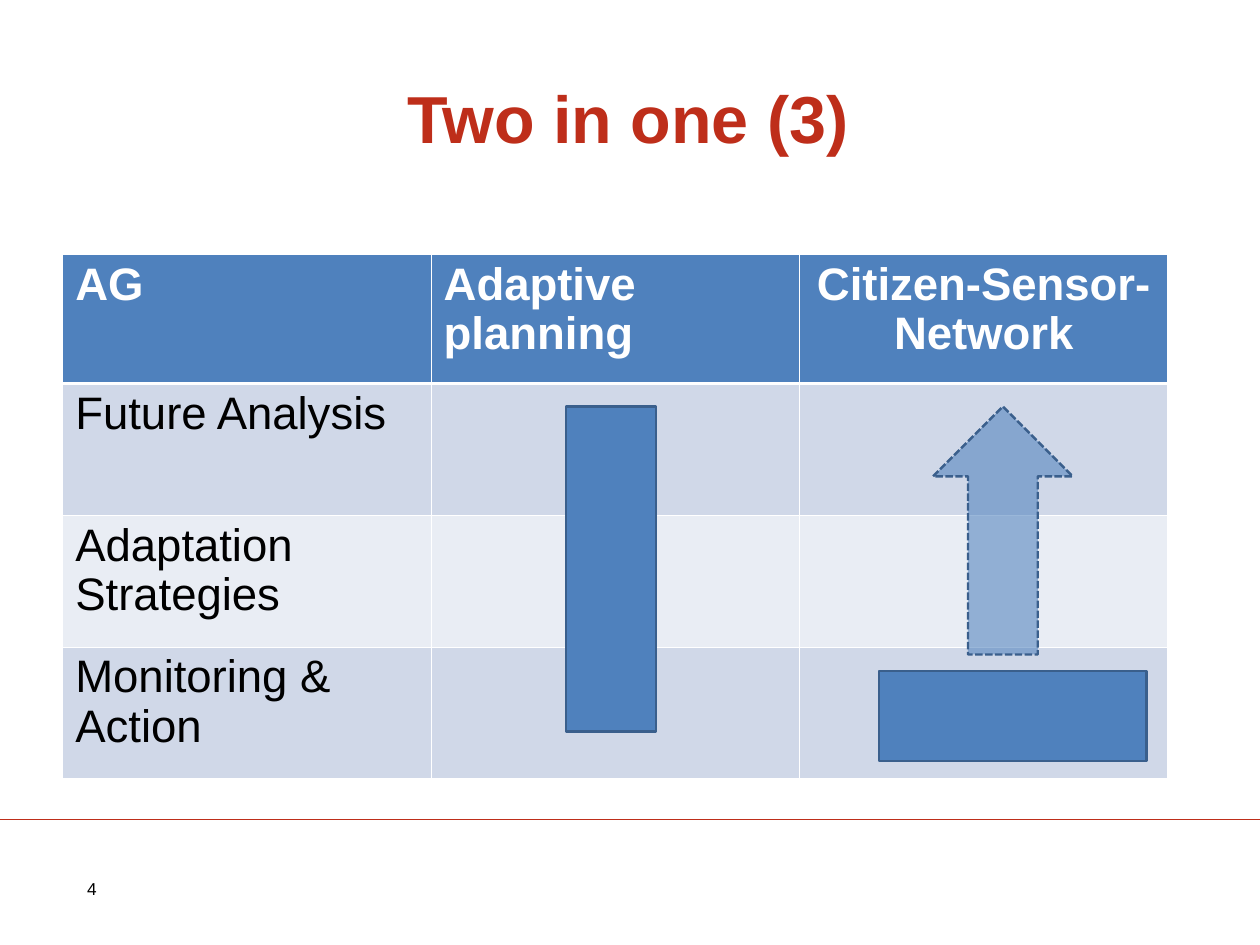
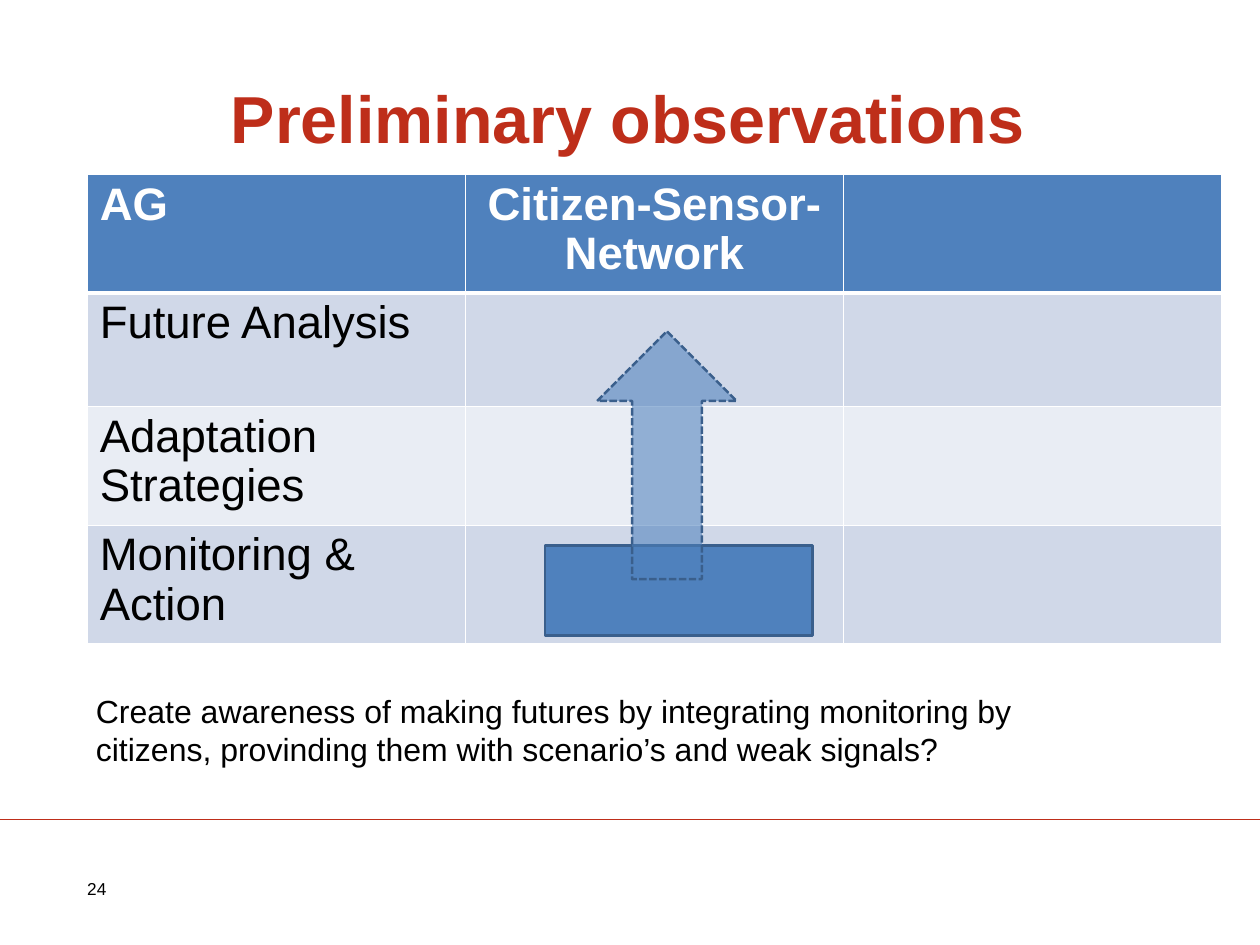
from lxml import etree
from pptx import Presentation
from pptx.dml.color import RGBColor
from pptx.enum.dml import MSO_LINE
from pptx.enum.shapes import MSO_CONNECTOR, MSO_SHAPE
from pptx.enum.text import MSO_ANCHOR, PP_ALIGN
from pptx.oxml.ns import qn
from pptx.util import Cm, Pt

RED = RGBColor(0xBE, 0x2E, 0x1A)
BLUE = RGBColor(0x4F, 0x81, 0xBD)
DARK_BLUE = RGBColor(0x3A, 0x5F, 0x8C)
BAND_DARK = RGBColor(0xD0, 0xD8, 0xE8)
BAND_LIGHT = RGBColor(0xE9, 0xED, 0xF4)
WHITE = RGBColor(0xFF, 0xFF, 0xFF)
BLACK = RGBColor(0, 0, 0)

LEFT, CENTER = PP_ALIGN.LEFT, PP_ALIGN.CENTER
TOP, MIDDLE = MSO_ANCHOR.TOP, MSO_ANCHOR.MIDDLE
RECTANGLE, UP_ARROW = MSO_SHAPE.RECTANGLE, MSO_SHAPE.UP_ARROW
STRAIGHT = MSO_CONNECTOR.STRAIGHT
DASH = MSO_LINE.SQUARE_DOT

FONT = "Arial"
WIDTH, HEIGHT = 36.12, 27.1
MARGIN = 2.5
TITLE_ONLY = 5
NETWORK = "Citizen-Sensor-Network"
STAGES = ["Future Analysis", "Adaptation Strategies", "Monitoring & Action"]


def set_text(text_frame, text, size, color=BLACK, bold=False, align=LEFT, spacing=1.0):
    text_frame.text = text
    paragraph = text_frame.paragraphs[0]
    paragraph.alignment = align
    paragraph.line_spacing = spacing
    for run in paragraph.runs:
        run.font.name = FONT
        run.font.size = Pt(size)
        run.font.bold = bold
        run.font.color.rgb = color


def set_margins(target, horizontal, vertical):
    target.margin_left = target.margin_right = Cm(horizontal)
    target.margin_top = target.margin_bottom = Cm(vertical)


def add_cell_borders(cell, widths):
    """Draw white borders; widths are points for left, right, top and bottom."""
    properties = cell._tc.get_or_add_tcPr()
    for side, width in zip("LRTB", widths):
        line = etree.SubElement(properties, qn(f"a:ln{side}"), w=str(Pt(width)))
        fill = etree.SubElement(line, qn("a:solidFill"))
        etree.SubElement(fill, qn("a:srgbClr"), val=str(WHITE))


class Deck:
    """Holds the shared style and the slide being filled."""

    def __init__(self):
        self.presentation = Presentation()
        self.presentation.slide_width = Cm(WIDTH)
        self.presentation.slide_height = Cm(HEIGHT)
        self.slide = None

    def add_slide(self, title, number):
        layout = self.presentation.slide_layouts[TITLE_ONLY]
        self.slide = self.presentation.slides.add_slide(layout)
        self.add_footer_line()
        self.format_title(title)
        self.add_text(str(number), MARGIN, 24.77, 1.75, 1.45, 14, MIDDLE, (0, 0))

    def format_title(self, text):
        title = self.slide.shapes.title
        title.left, title.top, title.width, title.height = Cm(MARGIN), Cm(2), Cm(31), Cm(3)
        title.text_frame.vertical_anchor = MIDDLE
        set_margins(title.text_frame, 0.1, 0.1)
        set_text(title.text_frame, text, 54, RED, True, CENTER, 0.9)

    def add_footer_line(self):
        line = self.slide.shapes.add_connector(
            STRAIGHT, Cm(0), Cm(23.5), Cm(WIDTH), Cm(23.5))
        line.line.color.rgb = RED
        line.line.width = Pt(1)
        etree.SubElement(line.element.spPr, qn("a:effectLst"))

    def add_text(self, text, left, top, width, height, size,
                 anchor=TOP, margins=(0.25, 0.13)):
        box = self.slide.shapes.add_textbox(Cm(left), Cm(top), Cm(width), Cm(height))
        box.text_frame.word_wrap = True
        box.text_frame.vertical_anchor = anchor
        set_margins(box.text_frame, *margins)
        set_text(box.text_frame, text, size)

    def add_stage_table(self, headers, left, top, column_width, header_height, row_height):
        """Add a table with the planning stages down its first column."""
        rows = [headers] + [[stage, "", ""] for stage in STAGES]
        heights = [header_height] + [row_height] * len(STAGES)
        table = self.slide.shapes.add_table(
            len(rows), len(headers), Cm(left), Cm(top),
            Cm(column_width * len(headers)), Cm(sum(heights))).table
        for column in table.columns:
            column.width = Cm(column_width)
        for index, (texts, height) in enumerate(zip(rows, heights)):
            table.rows[index].height = Cm(height)
            for cell, text in zip(table.rows[index].cells, texts):
                self.format_cell(cell, text, index)

    def format_cell(self, cell, text, row):
        is_header = row == 0
        add_cell_borders(cell, (1, 1, 3 if row == 1 else 1, 3 if is_header else 1))
        cell.fill.solid()
        band = BAND_DARK if row % 2 else BAND_LIGHT
        cell.fill.fore_color.rgb = BLUE if is_header else band
        set_margins(cell, 0.36, 0.18)
        if text:
            set_text(cell.text_frame, text, 37, WHITE if is_header else BLACK, is_header,
                     CENTER if text == NETWORK else LEFT, 0.97)

    def add_block(self, left, top, width=7.67, height=2.57, kind=RECTANGLE):
        shape = self.slide.shapes.add_shape(kind, Cm(left), Cm(top), Cm(width), Cm(height))
        shape.shadow.inherit = False
        shape.fill.solid()
        shape.fill.fore_color.rgb = BLUE
        shape.line.color.rgb = DARK_BLUE
        shape.line.width = Pt(2)
        return shape

    def add_dashed_arrow(self, left, top):
        arrow = self.add_block(left, top, 4, 7.11, UP_ARROW)
        arrow.line.dash_style = DASH
        color = arrow.element.spPr.find(qn("a:solidFill"))[0]
        etree.SubElement(color, qn("a:alpha"), val="57000")


def main():
    deck = Deck()

    deck.add_slide("Two in one (3)", 4)
    deck.add_stage_table(["AG", "Adaptive planning", NETWORK], 1.8, 7.3, 10.56, 3.7, 3.78)
    deck.add_block(25.2, 19.25)
    deck.add_dashed_arrow(26.75, 11.66)
    deck.add_block(16.23, 11.66, 2.57, 9.32)

    deck.add_slide("Preliminary observations", 24)
    deck.add_stage_table(["AG", NETWORK, ""], MARGIN, 5, 10.84, 3.25, 3.26)
    deck.add_block(15.62, 15.65)
    deck.add_dashed_arrow(17.12, 9.5)
    deck.add_text("Create awareness of making futures by integrating monitoring by citizens, "
                  "provinding them with scenario’s and weak signals?",
                  MARGIN, 19.7, 28.68, 2.5, 26)

    deck.presentation.save("out.pptx")


if __name__ == "__main__":
    main()
